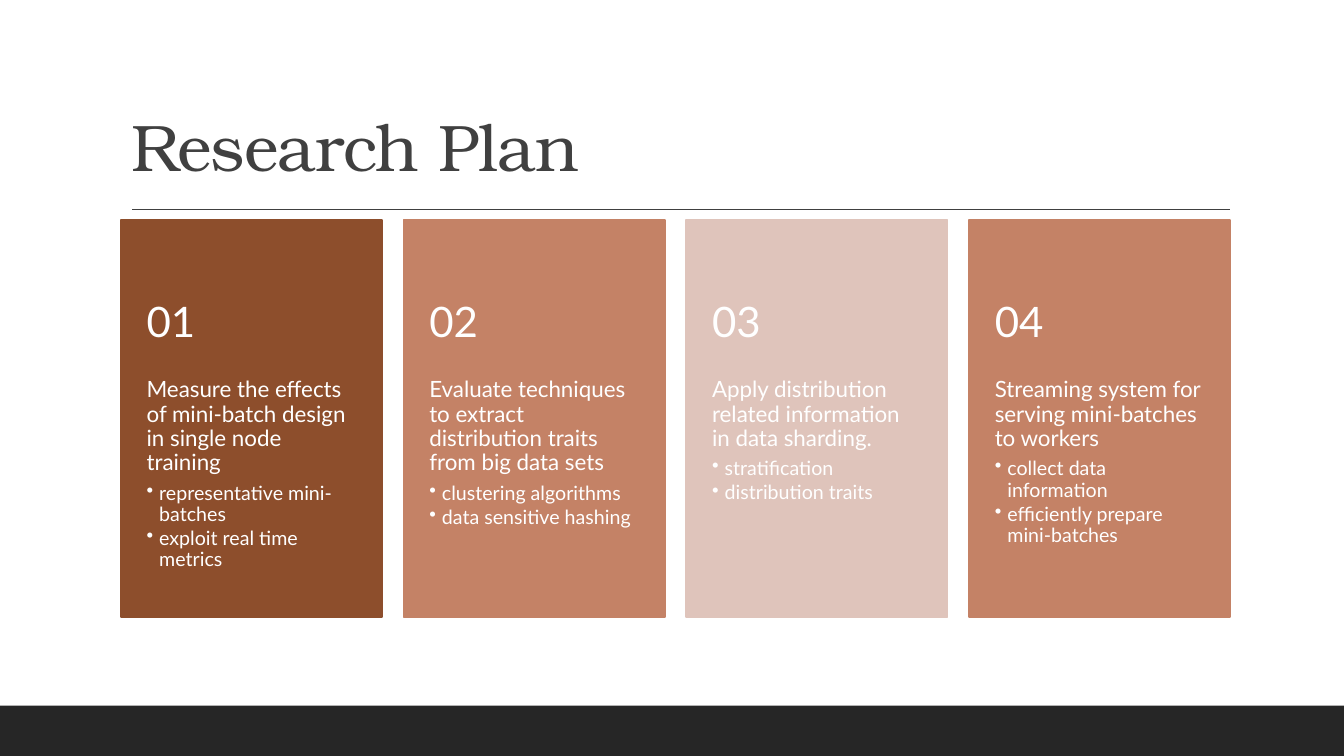
import pptx
import pptx.util
import pptx.dml.color
import pptx.enum.shapes
import pptx.enum.text
import pptx.oxml
import pptx.oxml.ns

Pt = pptx.util.Pt
Anchor = pptx.enum.text.MSO_ANCHOR
COLORS = {"bar": "262626", "ink": "404040", "white": "FFFFFF",
          "brown": "8D4E2C", "clay": "C48266", "blush": "DFC4BB"}
PLAN = [
    ("brown", "Measure the effects of mini-batch design in single node training",
     ["representative mini-batches", "exploit real time metrics"]),
    ("clay", "Evaluate techniques to extract distribution traits from big data sets",
     ["clustering algorithms", "data sensitive hashing"]),
    ("blush", "Apply distribution related information in data sharding.",
     ["stratification", "distribution traits"]),
    ("clay", "Streaming system for serving mini-batches to workers",
     ["collect data information", "efficiently prepare mini-batches"]),
]


def rgb(name):
    return pptx.dml.color.RGBColor.from_string(COLORS[name])


def frame(shape, anchor, insets):
    """Set up wrapping, anchor and insets (left, top, right, bottom)."""
    text = shape.text_frame
    text.word_wrap = True
    text.auto_size = pptx.enum.text.MSO_AUTO_SIZE.NONE
    text.vertical_anchor = anchor
    text.margin_left, text.margin_top, text.margin_right, text.margin_bottom = map(Pt, insets)
    return text


def write(para, words, size, font="Lato", color="white", after=0, track=0, bullet=False):
    para.alignment = pptx.enum.text.PP_ALIGN.LEFT
    para.line_spacing = 0.9
    para.space_before = Pt(0)
    para.space_after = Pt(after)
    run = para.add_run()
    run.text = words
    run.font.size = Pt(size)
    run.font.name = font
    run.font.color.rgb = rgb(color)
    if track:
        run.font._element.set("spc", str(round(track * 100)))
    if bullet:
        para.level = 1
        props = para._p.get_or_add_pPr()
        props.set("marL", str(Pt(9)))
        props.set("indent", str(Pt(-9)))
        mark = pptx.oxml.parse_xml(f'<a:buChar {pptx.oxml.ns.nsdecls("a")} char="•"/>')
        props.append(mark)


def block(slide, color, x, y, w, h, edge=0):
    kind = pptx.enum.shapes.MSO_SHAPE.RECTANGLE
    rect = slide.shapes.add_shape(kind, Pt(x), Pt(y), Pt(w), Pt(h))
    rect.shadow.inherit = False
    rect.fill.solid()
    rect.fill.fore_color.rgb = rgb(color)
    if edge:
        rect.line.color.rgb = rgb(color)
        rect.line.width = Pt(edge)
    else:
        rect.line.fill.background()


def header(slide, x, y, w, h):
    """Place the title in the box and the rule below it."""
    title = slide.shapes.title
    title.left, title.top, title.width, title.height = Pt(x), Pt(y), Pt(w), Pt(h)
    text = frame(title, Anchor.BOTTOM, (7.2, 3.6, 7.2, 3.6))
    write(text.paragraphs[0], "Research Plan", 47, font="TeX Gyre Bonum",
          color="ink", track=-0.5)
    rule_y = Pt(y + h + 13)
    rule = slide.shapes.add_connector(pptx.enum.shapes.MSO_CONNECTOR.STRAIGHT,
                                      Pt(x + 8), rule_y, Pt(x + w), rule_y)
    rule.line.color.rgb = rgb("ink")
    rule.line.width = Pt(1)
    rule._element.spPr.append(
        pptx.oxml.parse_xml(f'<a:effectLst {pptx.oxml.ns.nsdecls("a")}/>'))


def card(slide, x, y, w, h, number, color, goal, steps):
    block(slide, color, x, y, w, h, edge=1.25)

    body_y = 0.4 * h
    body = slide.shapes.add_textbox(Pt(x), Pt(y + body_y), Pt(w), Pt(h - body_y))
    text = frame(body, Anchor.TOP, (18.5, 0, 18.5, 26))
    write(text.paragraphs[0], goal, 16, after=5.6)
    for step in steps:
        write(text.add_paragraph(), step, 14, after=2.1, bullet=True)

    label = slide.shapes.add_textbox(Pt(x), Pt(y + 29.5), Pt(w), Pt(90))
    text = frame(label, Anchor.MIDDLE, (18.5, 13, 18.5, 13))
    write(text.paragraphs[0], f"{number:02}", 30, after=10.5)


def cards(slide, x, y, w, h, gap):
    """Share the width equally among the steps of the plan."""
    wide = (w - gap * (len(PLAN) - 1)) / len(PLAN)
    for i, (color, goal, steps) in enumerate(PLAN):
        card(slide, x + i * (wide + gap), y, wide, h, i + 1, color, goal, steps)


def main():
    deck = pptx.Presentation()
    deck.slide_width, deck.slide_height = Pt(960), Pt(540)
    slide = deck.slides.add_slide(deck.slide_layouts[5])
    block(slide, "bar", 0, 504, 960, 36)
    header(slide, 86.4, 22.5, 792, 114)
    cards(slide, 86.2, 157, 792.5, 283.5, 15.3)
    deck.save("out.pptx")


if __name__ == "__main__":
    main()
